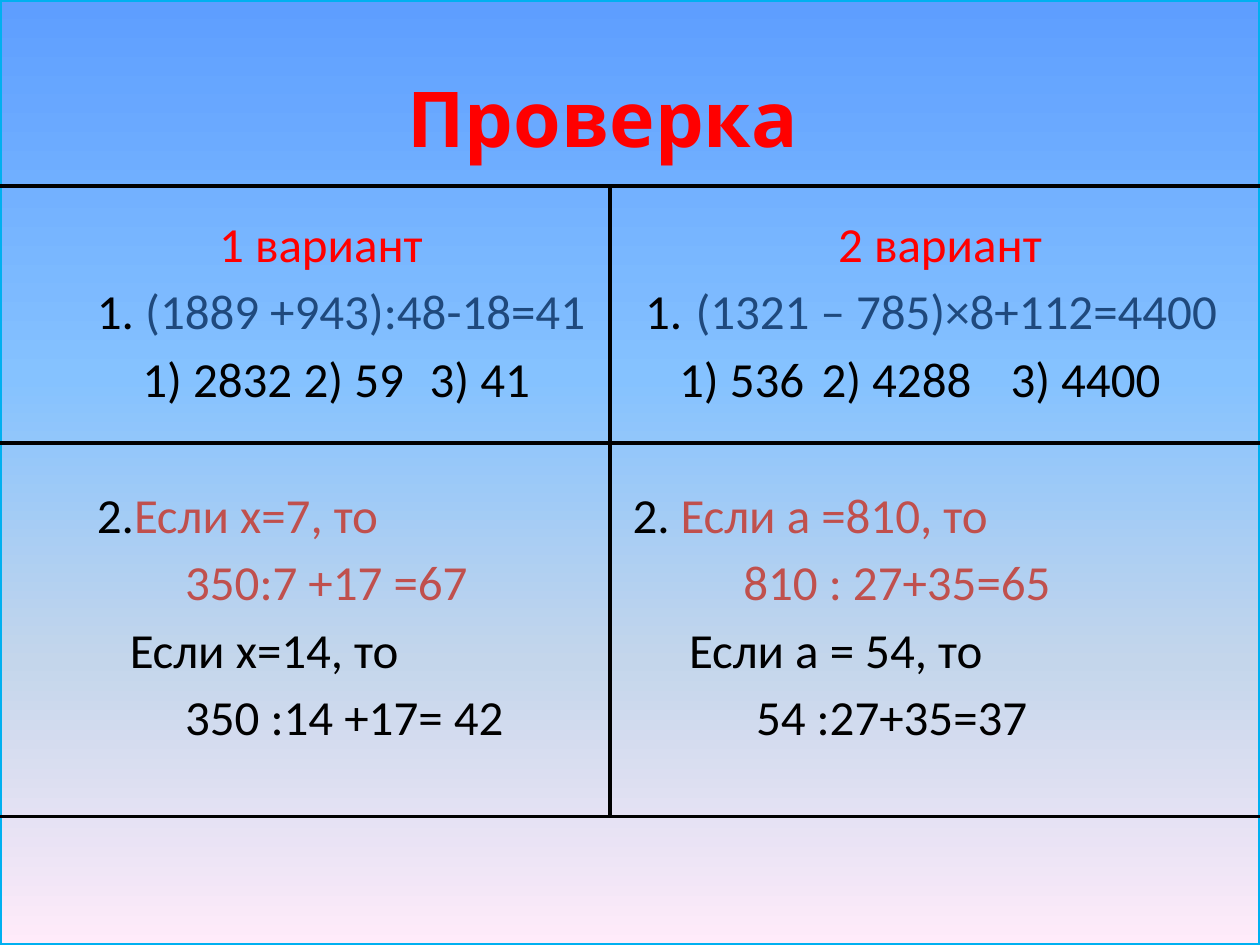
"""Build the answer check slide with two variants side by side."""
from dataclasses import dataclass

from lxml.etree import SubElement
from pptx import Presentation
from pptx.dml.color import RGBColor
from pptx.enum.shapes import MSO_CONNECTOR, MSO_SHAPE
from pptx.enum.text import MSO_ANCHOR, MSO_AUTO_SIZE, PP_ALIGN
from pptx.oxml import parse_xml
from pptx.oxml.ns import nsdecls, qn
from pptx.util import Inches, Pt

WIDTH, HEIGHT = Inches(10), Inches(7.5)
RED = RGBColor(0xFF, 0x00, 0x00)
BLACK = RGBColor(0x00, 0x00, 0x00)
NAVY = RGBColor(0x1F, 0x49, 0x7D)
BRICK = RGBColor(0xC0, 0x50, 0x4D)
CYAN = RGBColor(0x00, 0xB0, 0xF0)
SKY = (
    (0, RGBColor(0x5E, 0x9E, 0xFF)),
    (40, RGBColor(0x85, 0xC2, 0xFF)),
    (70, RGBColor(0xC4, 0xD6, 0xEB)),
    (100, RGBColor(0xFF, 0xEB, 0xFA)),
)
GAP, BREAK = 5, 44


@dataclass(frozen=True)
class Box:
    """Place of an object as shares of the slide's size."""
    left: float
    top: float
    width: float
    height: float

    def put(self, shape) -> None:
        """Move a shape to this place."""
        shape.left, shape.top = int(self.left * WIDTH), int(self.top * HEIGHT)
        shape.width, shape.height = int(self.width * WIDTH), int(self.height * HEIGHT)


@dataclass(frozen=True)
class Line:
    """One line of text: coloured pieces, indent and tab stops in inches."""
    pieces: tuple
    indent: float = 0
    tabs: tuple = ()
    before: float = GAP
    align: PP_ALIGN = PP_ALIGN.LEFT


@dataclass(frozen=True)
class Rule:
    """A straight divider between two points, as shares of the slide."""
    start: tuple
    end: tuple


LEFT = (
    Line((("1 вариант", RED),), 1.33),
    Line((("1.", BLACK), (" (1889 +943):48-18=41", NAVY)), 0.36),
    Line((("1) 2832\t2) 59\t3) 41", BLACK),), 0.72, (2.16, 3.48)),
    Line((("2.", BLACK), ("Если х=7, то", BRICK)), 0.36, before=BREAK),
    Line((("350:7 +17 =67", BRICK),), 1.06),
    Line((("Если х=14, то", BLACK),), 0.62),
    Line((("350 :14 +17= 42", BLACK),), 1.06),
)
RIGHT = (
    Line((("2 вариант", RED),), align=PP_ALIGN.CENTER),
    Line((("1.\t", BLACK), ("(1321 – 785)×8+112=4400", NAVY)), 0.1, (0.56,)),
    Line((("1) 536\t2) 4288\t3) 4400", BLACK),), 0.37, (1.61, 3.15)),
    Line((("2. ", BLACK), ("Если а =810, то", BRICK)), before=BREAK),
    Line((("810 : 27+35=65", BRICK),), 0.88),
    Line((("Если а = 54, то", BLACK),), 0.45),
    Line((("54 :27+35=37", BLACK),), 0.98),
)
TOP, MID, END, SPLIT = 0.197, 0.469, 0.864, 0.484
RULES = (
    *(Rule((0, y), (1, y)) for y in (TOP, MID, END)),
    Rule((SPLIT, TOP), (SPLIT, END)),
)


def add_text(para, text: str, *, font: str = "Calibri", size: float = 28,
             color: RGBColor = BLACK, bold: bool = False) -> None:
    """Append a formatted run to a paragraph."""
    run = para.add_run()
    run.text = text
    run.font.name, run.font.size, run.font.bold = font, Pt(size), bold
    run.font.color.rgb = color


def add_line(para, line: Line) -> None:
    """Fill one paragraph with its pieces, indent and tab stops."""
    para.alignment = line.align
    para.space_before = Pt(line.before)
    props = para._p.get_or_add_pPr()
    props.set("marL", "0")
    props.set("indent", str(Inches(line.indent)))
    SubElement(props, qn("a:buNone"))
    if line.tabs:
        stops = SubElement(props, qn("a:tabLst"))
        for pos in line.tabs:
            SubElement(stops, qn("a:tab"), pos=str(Inches(pos)), algn="l")
    for text, color in line.pieces:
        add_text(para, text, color=color)


def fill_body(shape, box: Box, lines: tuple) -> None:
    """Write a list of lines into a body placeholder."""
    box.put(shape)
    frame = shape.text_frame
    frame.word_wrap, frame.auto_size = True, MSO_AUTO_SIZE.NONE
    for row, line in enumerate(lines):
        add_line(frame.add_paragraph() if row else frame.paragraphs[0], line)


def add_sky(slide) -> None:
    """Lay the gradient panel behind everything."""
    panel = slide.shapes.add_shape(MSO_SHAPE.RECTANGLE, 0, 0, WIDTH, HEIGHT)
    panel.shadow.inherit = False
    stops = "".join(f'<a:gs pos="{share * 1000}"><a:srgbClr val="{color}"/></a:gs>'
                    for share, color in SKY)
    grad = parse_xml(f'<a:gradFill {nsdecls("a")} rotWithShape="1"><a:gsLst>{stops}'
                     '</a:gsLst><a:lin ang="5400000" scaled="0"/></a:gradFill>')
    panel._element.spPr.find(qn("a:prstGeom")).addnext(grad)
    panel.line.color.rgb, panel.line.width = CYAN, Pt(2)
    slide.shapes._spTree.insert(2, panel._element)


def add_rule(slide, rule: Rule) -> None:
    """Draw one divider."""
    ends = [int(share * side) for point in (rule.start, rule.end)
            for share, side in zip(point, (WIDTH, HEIGHT))]
    link = slide.shapes.add_connector(MSO_CONNECTOR.STRAIGHT, *ends)
    link.line.color.rgb, link.line.width = BLACK, Pt(2.25)
    SubElement(link._element.spPr, qn("a:effectLst"))


def main() -> None:
    """Build and save the slide."""
    deck = Presentation()
    deck.slide_width, deck.slide_height = WIDTH, HEIGHT
    slide = deck.slides.add_slide(deck.slide_layouts[3])
    title, left, right = list(slide.placeholders)[:3]
    add_sky(slide)
    Box(0.05, 0.04, 0.9, 0.167).put(title)
    frame = title.text_frame
    frame.vertical_anchor, frame.margin_right = MSO_ANCHOR.MIDDLE, Inches(0.53)
    frame.paragraphs[0].alignment = PP_ALIGN.CENTER
    add_text(frame.paragraphs[0], "Проверка", font="Comic Neue", size=44,
             color=RED, bold=True)
    fill_body(left, Box(0.031, 0.219, 0.466, 0.66), LEFT)
    fill_body(right, Box(0.492, 0.219, 0.508, 0.66), RIGHT)
    for rule in RULES:
        add_rule(slide, rule)
    deck.save("out.pptx")


if __name__ == "__main__":
    main()
